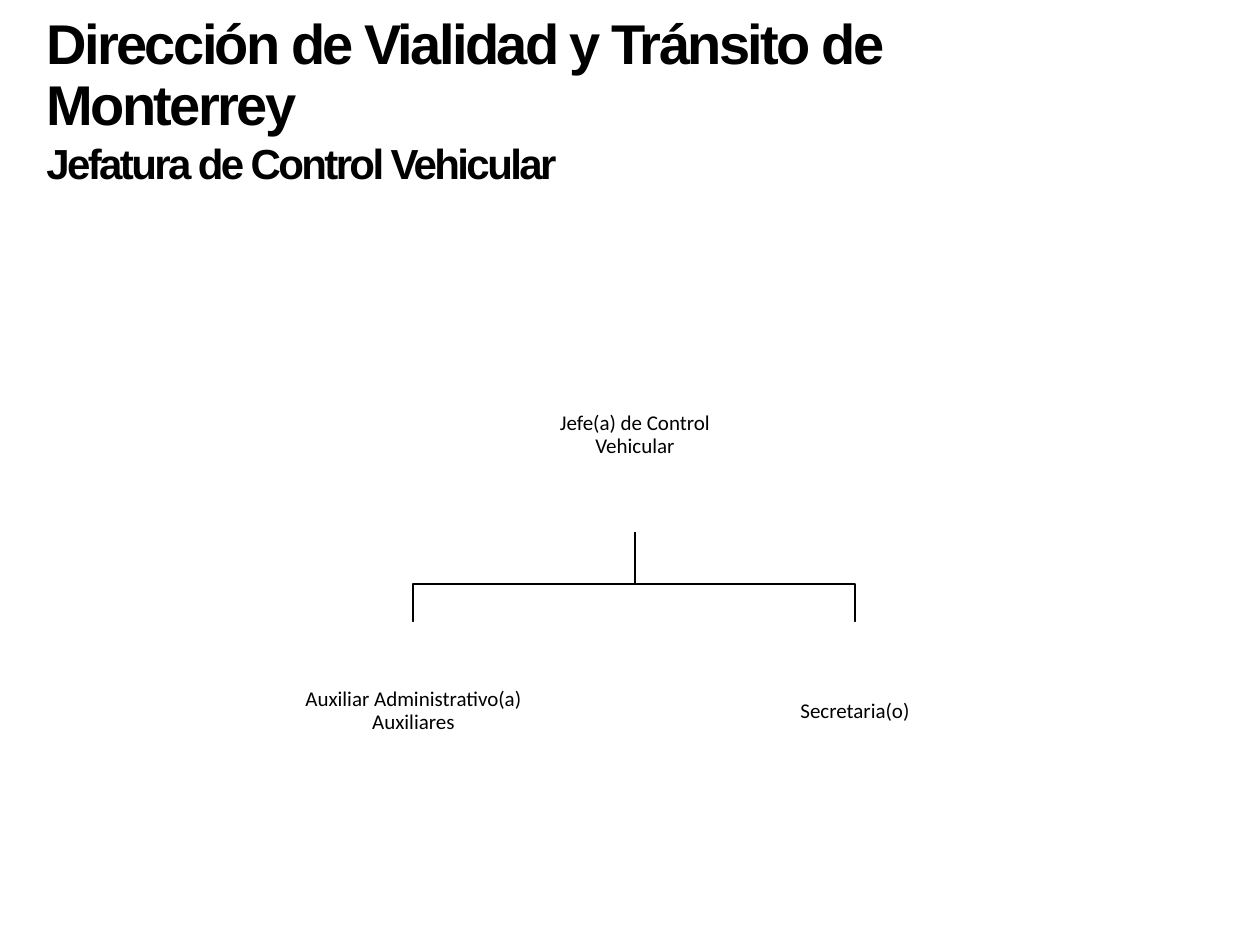
from dataclasses import dataclass

from pptx import Presentation
from pptx.dml.color import RGBColor
from pptx.enum.shapes import MSO_SHAPE
from pptx.enum.text import MSO_ANCHOR, PP_ALIGN
from pptx.util import Pt

RECT = MSO_SHAPE.RECTANGLE
MIDDLE, CENTER = MSO_ANCHOR.MIDDLE, PP_ALIGN.CENTER
SCALE = 914400 / 126


def emu(px):
    return round(px * SCALE)


@dataclass
class Theme:
    ink: RGBColor = RGBColor(0, 0, 0)
    paper: RGBColor = RGBColor(255, 255, 255)
    head: str = "Arial"
    body: str = "Calibri"
    title: int = 32
    sub: int = 24
    label: int = 12
    line: int = 1
    track: int = -150


class Chart:
    """Draws the parts of an organisation chart on one slide."""

    def __init__(self, slide, theme):
        self.slide, self.theme = slide, theme

    def style(self, item, **values):
        for key, value in values.items():
            setattr(item, key, value)

    def label(self, par, text, size, font, bold=False):
        run = par.add_run()
        run.text = text
        self.style(run.font, size=Pt(size), name=font, bold=bold)
        run.font.color.rgb = self.theme.ink
        return run

    def title(self, box, head, sub):
        theme = self.theme
        frame = self.slide.shapes.add_textbox(*map(emu, box)).text_frame
        frame.word_wrap = True
        first, second = frame.paragraphs[0], frame.add_paragraph()
        first.line_spacing = 0.9
        for par, text, size in ((first, head, theme.title), (second, sub, theme.sub)):
            run = self.label(par, text, size, theme.head, True)
            run._r.get_or_add_rPr().set("spc", str(theme.track))

    def node(self, box, lines, solid=True):
        theme, shapes = self.theme, self.slide.shapes
        if solid:
            shape = shapes.add_shape(RECT, *map(emu, box))
            shape.shadow.inherit = False
            shape.fill.solid()
            shape.fill.fore_color.rgb = theme.paper
            shape.line.fill.background()
        else:
            shape = shapes.add_textbox(*map(emu, box))
        frame, pad = shape.text_frame, emu(1)
        self.style(frame, word_wrap=True, vertical_anchor=MIDDLE,
                   margin_left=pad, margin_right=pad,
                   margin_top=pad, margin_bottom=pad)
        for i, text in enumerate(lines):
            par = frame.add_paragraph() if i else frame.paragraphs[0]
            self.style(par, alignment=CENTER, line_spacing=0.9)
            self.label(par, text, theme.label, theme.body)

    def branch(self, start, bend, end):
        (x, y), (ex, ey) = start, end
        elbow = self.slide.shapes.build_freeform(x, y, scale=SCALE)
        elbow.add_line_segments([(x, bend), (ex, bend), (ex, ey)], close=False)
        shape = elbow.convert_to_shape()
        shape.shadow.inherit = False
        shape.fill.background()
        shape.line.color.rgb = self.theme.ink
        shape.line.width = Pt(self.theme.line)


def main():
    deck = Presentation()
    deck.slide_width, deck.slide_height = emu(1260), emu(945)
    chart = Chart(deck.slides.add_slide(deck.slide_layouts[6]), Theme())

    boss = (444, 338, 382, 194)
    staff = [
        ((232, 622, 363, 179), ["Auxiliar Administrativo(a)", "Auxiliares"]),
        ((672, 622, 366, 179), ["Secretaria(o)"]),
    ]
    left, top, width, height = boss
    stem = (left + width // 2, top + height)
    for (x, y, wide, _), _ in reversed(staff):
        chart.branch(stem, 584, (x + wide // 2, y))
    chart.node(boss, ["Jefe(a) de Control", "Vehicular"], solid=False)
    for box, lines in staff:
        chart.node(box, lines)
    chart.title((34, 10, 940, 185), "Dirección de Vialidad y Tránsito de Monterrey",
                "Jefatura de Control Vehicular")
    deck.save("out.pptx")


if __name__ == "__main__":
    main()
